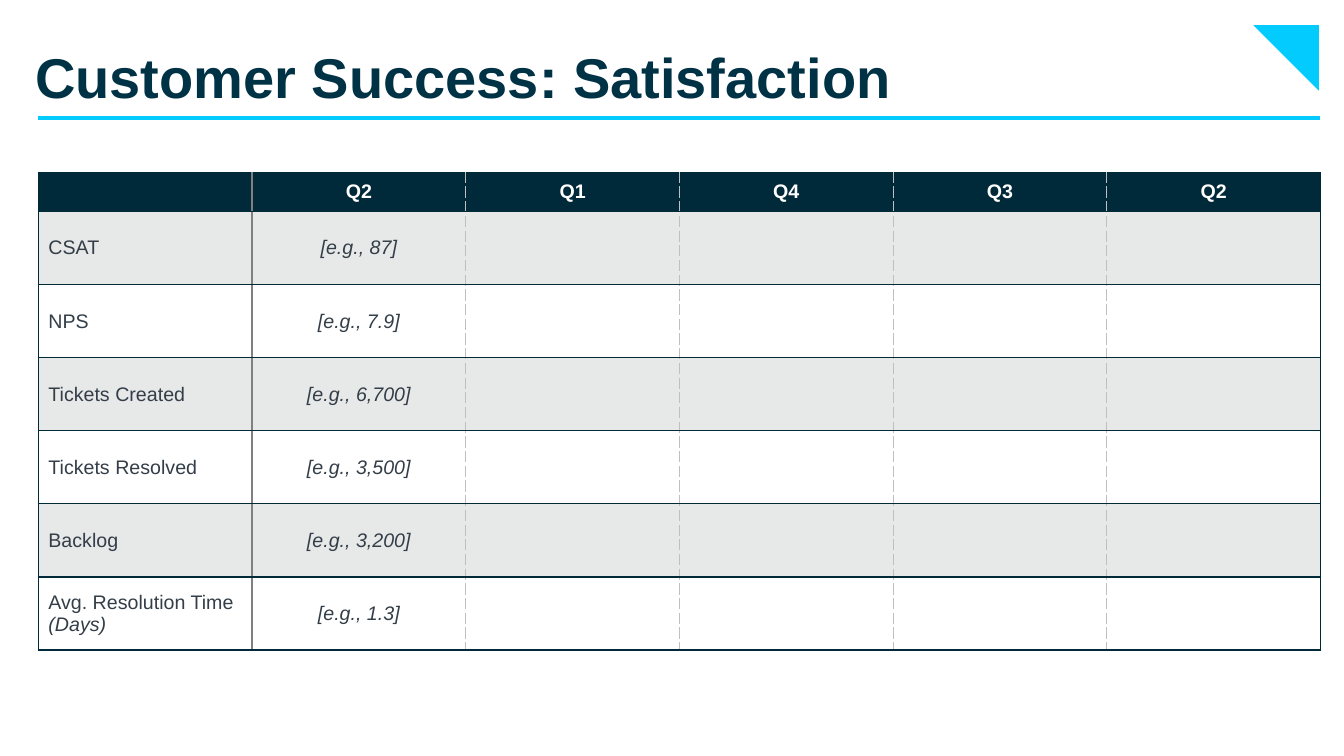
from lxml.etree import SubElement
from pptx import Presentation
from pptx.dml.color import RGBColor
from pptx.enum.shapes import MSO_CONNECTOR, MSO_SHAPE
from pptx.enum.text import MSO_ANCHOR, MSO_AUTO_SIZE, PP_ALIGN
from pptx.oxml.ns import qn
from pptx.util import Inches, Pt

TITLE = "Customer Success: Satisfaction"
HEADS = ["", "Q2", "Q1", "Q4", "Q3", "Q2"]
# metric, unit, example value
METRICS = [
    ("CSAT", "", "[e.g., 87]"),
    ("NPS", "", "[e.g., 7.9]"),
    ("Tickets Created", "", "[e.g., 6,700]"),
    ("Tickets Resolved", "", "[e.g., 3,500]"),
    ("Backlog", "", "[e.g., 3,200]"),
    ("Avg. Resolution Time ", "(Days)", "[e.g., 1.3]"),
]
THEME = {
    "font": "Arial", "title_size": 40, "cell_size": 14,
    "title": "003246", "accent": "03CBFD", "navy": "002A3A",
    "text": "333E48", "white": "FFFFFF", "band": "E7E8E8",
    "gray": "808080", "dash": "BFBFBF",
}
LEFT, TOP, COL_W, HEAD_H, ROW_H = 0.38, 1.71, 2.12, 0.39, 0.725


def color(name):
    return RGBColor.from_string(THEME[name])


def put(item, values):
    for key, value in values.items():
        setattr(item, key, value)


def write(para, text, size, tint, bold=False, italic=False):
    run = para.add_run()
    run.text = text
    put(run.font, {"name": THEME["font"], "size": Pt(size),
                   "bold": bold, "italic": italic})
    run.font.color.rgb = color(tint)


def border(cell, col):
    """Draw the four edges; they must precede the fill in the cell's XML."""
    last = len(HEADS) - 1
    edges = {0: "navy", 1: "gray", last + 1: "navy"}
    sides = {"lnL": edges.get(col, "dash"), "lnR": edges.get(col + 1, "dash"),
             "lnT": "navy", "lnB": "navy"}
    props = cell._tc.get_or_add_tcPr()
    for tag, tint in sides.items():
        line = SubElement(props, qn(f"a:{tag}"), w=str(Pt(1)))
        fill = SubElement(line, qn("a:solidFill"))
        SubElement(fill, qn("a:srgbClr"), val=THEME[tint])
        SubElement(line, qn("a:prstDash"),
                   val="lgDash" if tint == "dash" else "solid")


def add_title(slide):
    title = slide.shapes.title
    put(title, {"left": Inches(0.25), "top": Inches(0.25),
                "width": Inches(12.84), "height": Inches(1.18)})
    frame = title.text_frame
    put(frame, {"margin_left": Inches(0.1), "margin_right": Inches(0.1),
                "margin_top": Inches(0.17), "margin_bottom": Inches(0.1),
                "vertical_anchor": MSO_ANCHOR.TOP, "word_wrap": True,
                "auto_size": MSO_AUTO_SIZE.NONE})
    para = frame.paragraphs[0]
    para.alignment = PP_ALIGN.LEFT
    write(para, TITLE, THEME["title_size"], "title", bold=True)


def add_decor(slide):
    corner = slide.shapes.add_shape(
        MSO_SHAPE.RIGHT_TRIANGLE, Inches(12.43), Inches(0.25),
        Inches(0.65), Inches(0.65))
    corner.rotation = 180
    corner.shadow.inherit = False
    corner.fill.solid()
    corner.fill.fore_color.rgb = color("accent")
    corner.line.fill.background()

    rule = slide.shapes.add_connector(
        MSO_CONNECTOR.STRAIGHT, Inches(LEFT), Inches(1.17),
        Inches(13.09), Inches(1.17))
    rule.line.color.rgb = color("accent")
    rule.line.width = Pt(3)
    SubElement(rule._element.spPr, qn("a:effectLst"))


def add_grid(slide):
    rows, cols = len(METRICS) + 1, len(HEADS)
    table = slide.shapes.add_table(
        rows, cols, Inches(LEFT), Inches(TOP), Inches(COL_W * cols),
        Inches(HEAD_H + ROW_H * len(METRICS))).table
    for col in table.columns:
        col.width = Inches(COL_W)
    for num, row in enumerate(table.rows):
        row.height = Inches(ROW_H if num else HEAD_H)
        for col, cell in enumerate(row.cells):
            put(cell, {"vertical_anchor": MSO_ANCHOR.MIDDLE,
                       "margin_top": 0, "margin_bottom": 0})
            border(cell, col)
            cell.fill.solid()
            back = "navy" if num == 0 else "band" if num % 2 else "white"
            cell.fill.fore_color.rgb = color(back)
            para = cell.text_frame.paragraphs[0]
            para.alignment = PP_ALIGN.CENTER if col else PP_ALIGN.LEFT
            size = THEME["cell_size"]
            if num == 0:
                if HEADS[col]:
                    write(para, HEADS[col], size, "white", bold=True)
                continue
            name, unit, value = METRICS[num - 1]
            if col == 0:
                write(para, name, size, "text")
                if unit:
                    write(para, unit, size, "text", italic=True)
            elif col == 1:
                write(para, value, size, "text", italic=True)


def main():
    deck = Presentation()
    put(deck, {"slide_width": Inches(13.33), "slide_height": Inches(7.5)})
    slide = deck.slides.add_slide(deck.slide_layouts[5])
    add_decor(slide)
    add_title(slide)
    add_grid(slide)
    deck.save("out.pptx")


if __name__ == "__main__":
    main()
